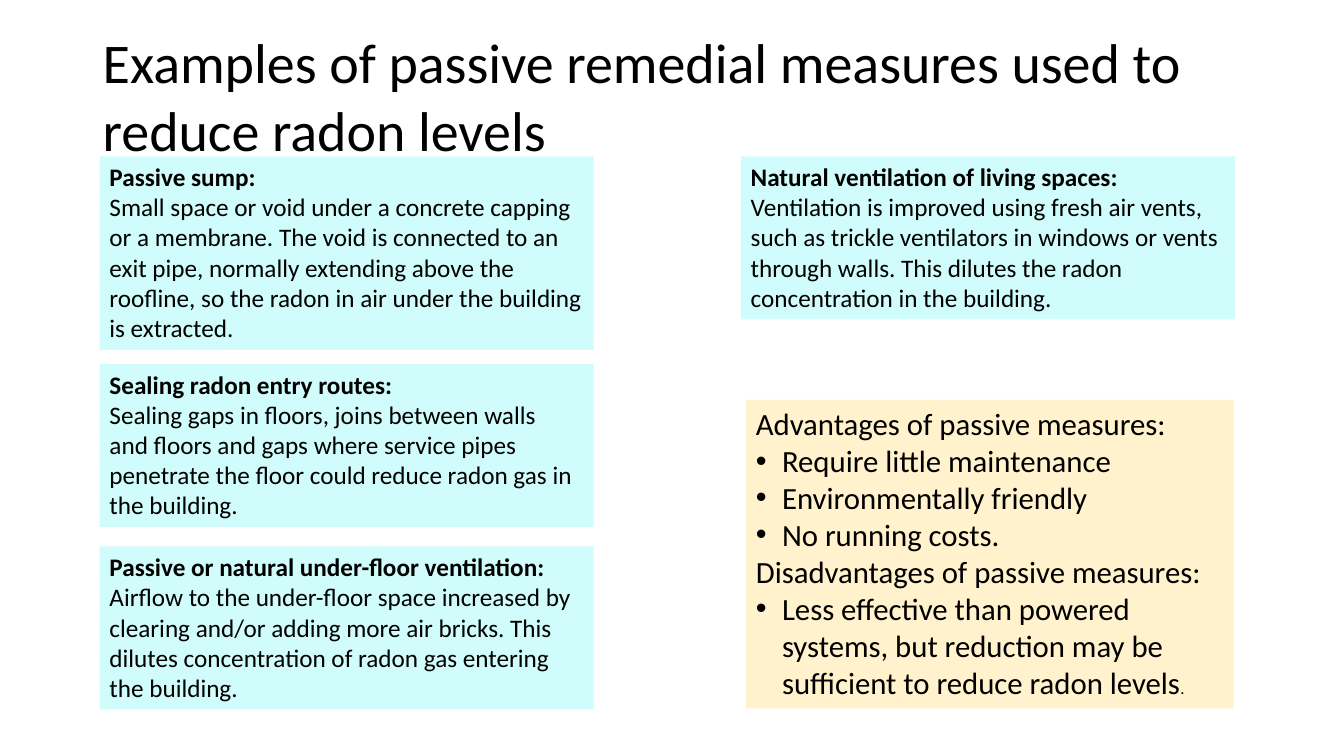
from pptx import Presentation
from pptx.dml.color import RGBColor
from pptx.enum.shapes import MSO_SHAPE
from pptx.enum.text import MSO_ANCHOR, PP_ALIGN
from pptx.oxml.ns import qn
from pptx.util import Cm, Pt
from lxml.etree import SubElement

BLACK = RGBColor(0x00, 0x00, 0x00)
AQUA = RGBColor(0xD0, 0xFC, 0xFB)
CREAM = RGBColor(0xFF, 0xF2, 0xCC)

LEFT, RIGHT = 2.51, 18.67
CARD_WIDTH = 12.45
CARD_HEIGHT = 4.11

# Left, top, height, heading, description
MEASURES = [
    (LEFT, 3.94, 4.88, "Passive sump:",
     "Small space or void under a concrete capping or a membrane. The void is "
     "connected to an exit pipe, normally extending above the roofline, so the "
     "radon in air under the building is extracted."),
    (LEFT, 9.17, CARD_HEIGHT, "Sealing radon entry routes:",
     "Sealing gaps in floors, joins between walls\vand floors and gaps where "
     "service pipes penetrate the floor could reduce radon gas in the building."),
    (LEFT, 13.77, CARD_HEIGHT, "Passive or natural under-floor ventilation:",
     "Airflow to the under-floor space increased by clearing and/or adding more "
     "air bricks. This dilutes concentration of radon gas entering the building."),
    (RIGHT, 3.94, CARD_HEIGHT, "Natural ventilation of living spaces:",
     "Ventilation is improved using fresh air vents, such as trickle ventilators "
     "in windows or vents through walls. This dilutes the radon concentration in "
     "the building."),
]

ASSESSMENT = [
    ("Advantages of passive measures:",
     ["Require little maintenance", "Environmentally friendly", "No running costs."]),
    ("Disadvantages of passive measures:",
     ["Less effective than powered systems, but reduction may be sufficient to "
      "reduce radon levels"]),
]


class SlideBuilder:
    def __init__(self, slide, font="Calibri", color=BLACK):
        self.slide, self.font, self.color = slide, font, color

    def style(self, p, size, bold=False):
        p.alignment = PP_ALIGN.LEFT
        for r in p.runs:
            r.font.name = self.font
            r.font.size = Pt(size)
            r.font.bold = bold
            r.font.color.rgb = self.color

    def title(self, text, left, top, width, height):
        tf = self.slide.shapes.add_textbox(
            Cm(left), Cm(top), Cm(width), Cm(height)).text_frame
        tf.word_wrap = True
        tf.text = text
        self.style(tf.paragraphs[0], 40)

    def panel(self, left, top, width, height, fill):
        s = self.slide.shapes.add_shape(
            MSO_SHAPE.RECTANGLE, Cm(left), Cm(top), Cm(width), Cm(height))
        s.shadow.inherit = False
        s.fill.solid()
        s.fill.fore_color.rgb = fill
        s.line.fill.background()
        tf = s.text_frame
        tf.word_wrap = True
        tf.vertical_anchor = MSO_ANCHOR.TOP
        return tf

    def card(self, left, top, height, heading, description):
        tf = self.panel(left, top, CARD_WIDTH, height, AQUA)
        tf.text = f"{heading}\n{description}"
        for p, bold in zip(tf.paragraphs, (True, False)):
            self.style(p, 18, bold)

    def bullet(self, p, indent=0.66):
        pPr = p._p.get_or_add_pPr()
        pPr.set("marL", str(Cm(indent)))
        pPr.set("indent", str(-Cm(indent)))
        SubElement(pPr, qn("a:buFont"), typeface="Arial")
        SubElement(pPr, qn("a:buChar"), char="•")

    def assessment(self, left, top, width, height, groups):
        tf = self.panel(left, top, width, height, CREAM)
        lines = [(text, i > 0) for heading, points in groups
                 for i, text in enumerate([heading, *points])]
        tf.text = "\n".join(text for text, _ in lines)
        for p, (_, bulleted) in zip(tf.paragraphs, lines):
            self.style(p, 22)
            if bulleted:
                self.bullet(p)
        # Small closing full stop
        r = p.add_run()
        r.text = "."
        self.style(p, 22)
        r.font.size = Pt(12)


def main():
    prs = Presentation()
    prs.slide_width, prs.slide_height = Cm(33.87), Cm(19.05)
    builder = SlideBuilder(prs.slides.add_slide(prs.slide_layouts[6]))

    # Title
    builder.title("Examples of passive remedial measures used to reduce radon levels",
                  2.34, 0.58, 27.91, 3.68)

    # Measures
    for measure in MEASURES:
        builder.card(*measure)

    # Advantages and disadvantages
    builder.assessment(18.8, 10.08, 12.29, 7.77, ASSESSMENT)

    prs.save("out.pptx")


if __name__ == "__main__":
    main()
